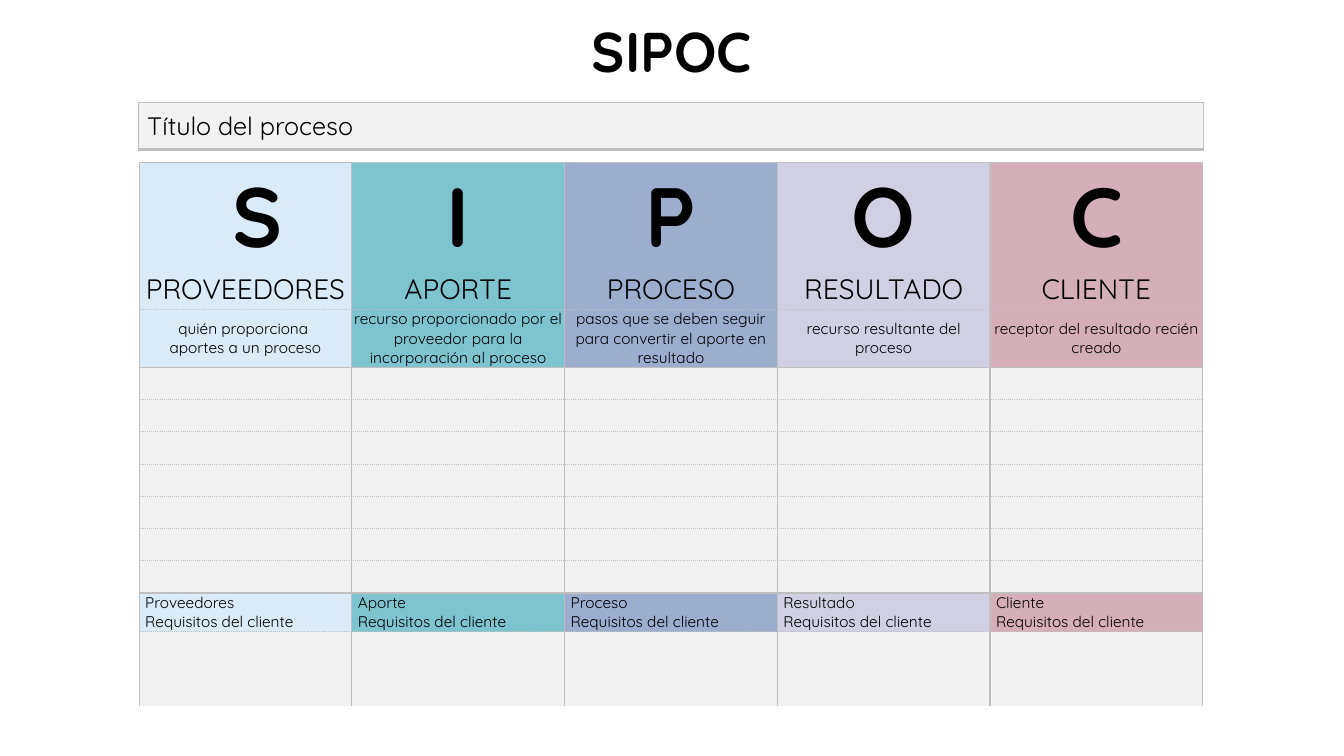
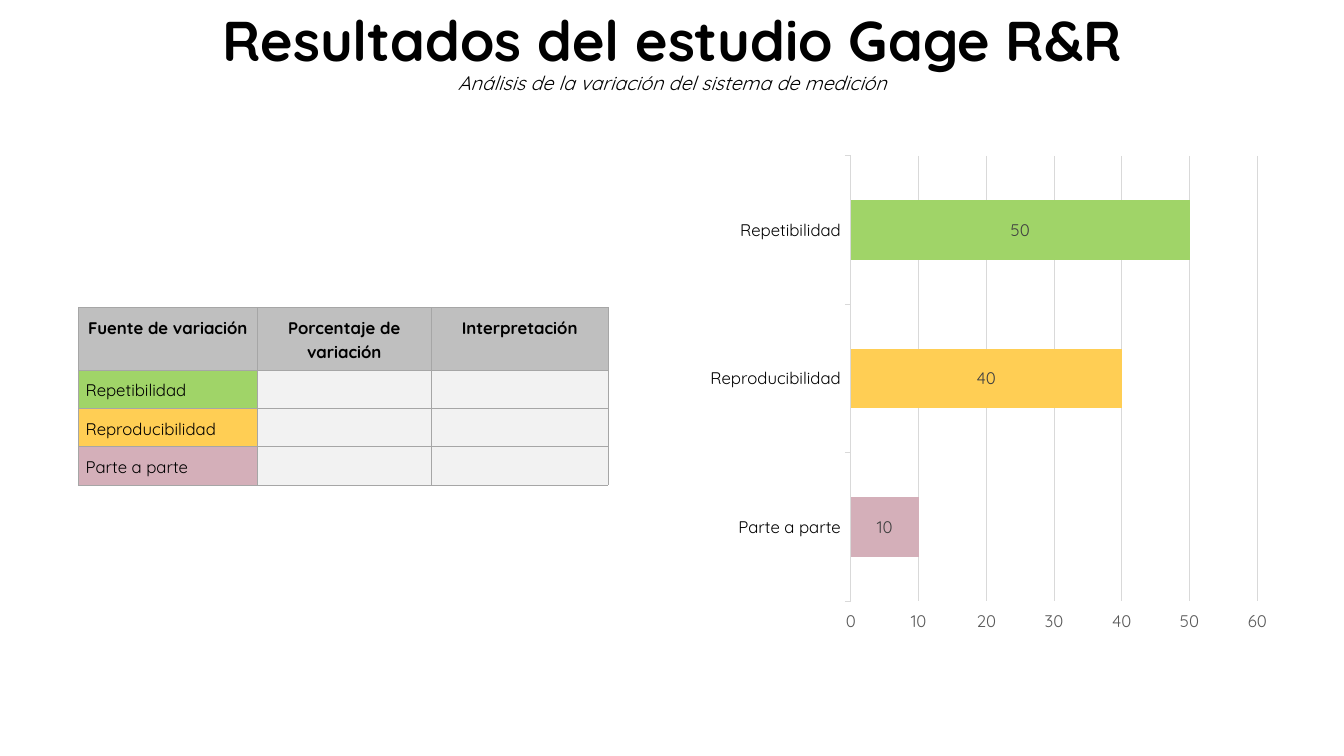
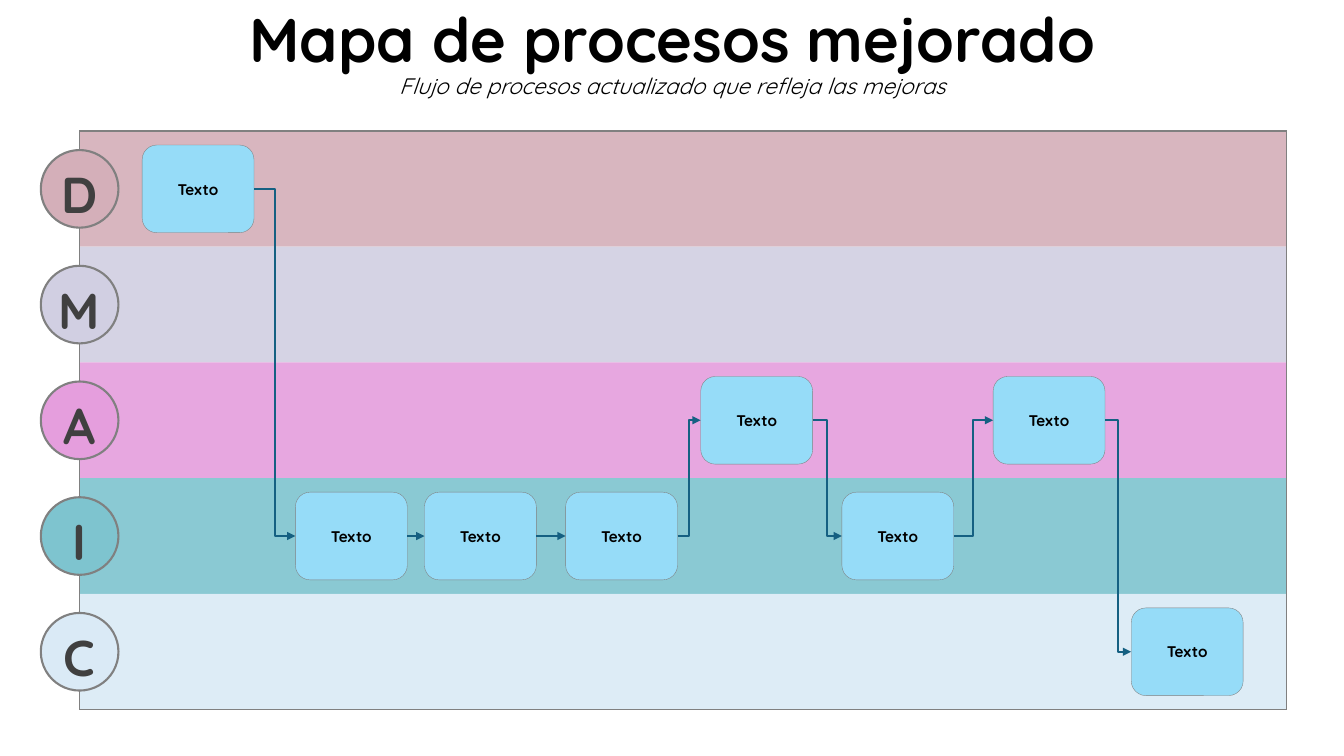
from lxml.etree import SubElement
from pptx import Presentation
from pptx.chart.data import CategoryChartData
from pptx.dml.color import RGBColor
from pptx.enum.chart import XL_CHART_TYPE as ChartType, XL_LABEL_POSITION as LabelPosition
from pptx.enum.chart import XL_TICK_MARK as TickMark
from pptx.enum.shapes import MSO_CONNECTOR as Connector, MSO_SHAPE as Shape
from pptx.enum.text import MSO_ANCHOR as Anchor, MSO_AUTO_SIZE as AutoSize, PP_ALIGN as Align
from pptx.oxml.ns import qn
from pptx.util import Emu, Pt

# Shared look
FONT = "Quicksand"
EMU_PER_PX = 9144  # 100 px to the inch
COLORS = {
    "black": "000000", "dark": "404040", "axis": "595959", "outline": "808080",
    "edge": "A6A6A6", "header": "BFBFBF", "grid": "D9D9D9", "empty": "F2F2F2",
    "sky": "DAEAF6", "teal": "7EC4CF", "blue": "9CADCE", "lilac": "D1CFE2",
    "rose": "D4AFB9", "pink": "E59EDD", "green": "A0D468", "yellow": "FFCE54",
    "box": "96DCF8", "arrow": "156082",
}

# Lines are (colour, points, dash)
SOLID = ("header", 1, "solid")
DOTTED = ("header", 1, "sysDot")
THICK = ("header", 2.25, "solid")
THIN = ("edge", 0.25, "solid")
FRAME = ("outline", 1, "solid")

# SIPOC content
PROCESS_TITLE = "Título del proceso"
SIPOC_COLUMNS = [
    (" S", "PROVEEDORES", "quién proporciona \naportes a un proceso", "Proveedores", "sky"),
    ("I", "APORTE", "recurso proporcionado por el proveedor para la incorporación al proceso",
     "Aporte", "teal"),
    ("P", "PROCESO", "pasos que se deben seguir para convertir el aporte en resultado",
     "Proceso", "blue"),
    ("O", "RESULTADO", "recurso resultante del proceso", "Resultado", "lilac"),
    ("C", "CLIENTE", "receptor del resultado recién creado", "Cliente", "rose"),
]
REQUIREMENTS = "Requisitos del cliente"
REQUIREMENTS_ROW = 10
SIPOC_ROWS = [106, 40, 56] + [32] * 7 + [38, 74]
SIPOC_RULES = [SOLID, None, DOTTED, SOLID] + [DOTTED] * 6 + [SOLID, DOTTED, None]

# Gage content
GAGE_HEADERS = ["Fuente de variación", "Porcentaje de variación", "Interpretación"]
GAGE_SOURCES = [
    ("Repetibilidad", 50, "green"),
    ("Reproducibilidad", 40, "yellow"),
    ("Parte a parte", 10, "rose"),
]

# Process map content: lanes, then boxes in flow order as (left, lane)
LANES = [("D", "rose"), ("M", "lilac"), ("A", "pink"), ("I", "teal"), ("C", "sky")]
BOX_TEXT = "Texto"
BOXES = [(141, 0), (293, 3), (421, 3), (561, 3), (695, 2), (835, 3), (985, 2), (1122, 4)]
BOX_WIDTH, BOX_HEIGHT, CIRCLE = 111, 87, 77
MAP_LEFT, MAP_TOP, MAP_WIDTH, MAP_HEIGHT = 79, 130, 1197, 574


def px(length):
    return Emu(round(length * EMU_PER_PX))


def rgb(name):
    return RGBColor.from_string(COLORS[name])


def style_font(font, size, color="black", bold=False, italic=False):
    font.name, font.size = FONT, Pt(size)
    font.bold, font.italic = bold, italic
    font.color.rgb = rgb(color)


def write(text_frame, text, size, color="black", bold=False, align=Align.CENTER, spacing=None):
    paragraph = text_frame.paragraphs[0]
    paragraph.text = text
    paragraph.alignment = align
    if spacing:
        paragraph.line_spacing = spacing
    for run in paragraph.runs:
        style_font(run.font, size, color, bold)
    for line_break in paragraph._p.findall(qn("a:br")):
        SubElement(line_break, qn("a:rPr"), sz=str(size * 100))
    if not text:
        SubElement(paragraph._p, qn("a:endParaRPr"), sz=str(size * 100))
    return paragraph


def set_margins(target, left, top, right, bottom):
    target.margin_left, target.margin_top = px(left), px(top)
    target.margin_right, target.margin_bottom = px(right), px(bottom)


def add_titled_slide(presentation, title, size, left, width, subtitle="", subtitle_size=0):
    slide = presentation.slides.add_slide(presentation.slide_layouts[5])
    shape = slide.shapes.title
    shape.left, shape.top, shape.width, shape.height = px(left), px(0), px(width), px(108)
    text_frame = shape.text_frame
    text_frame.word_wrap = True
    text_frame.auto_size = AutoSize.NONE
    text_frame.vertical_anchor = Anchor.MIDDLE
    text = f"{title}\n{subtitle}" if subtitle else title
    paragraph = write(text_frame, text, size, bold=True, spacing=0.9)
    if subtitle:
        style_font(paragraph.runs[1].font, subtitle_size, italic=True)
    return slide


def add_plain_table(slide, left, top, widths, heights):
    frame = slide.shapes.add_table(len(heights), len(widths), px(left), px(top),
                                   px(sum(widths)), px(sum(heights)))
    table = frame.table
    table.first_row = table.horz_banding = False
    for column, width in zip(table.columns, widths):
        column.width = px(width)
    for row, height in zip(table.rows, heights):
        row.height = px(height)
    return table


def style_cell(cell, fill, sides, top, bottom, alpha=None):
    properties = cell._tc.get_or_add_tcPr()
    for side, line in zip("LRTB", (sides, sides, top, bottom)):
        border = SubElement(properties, qn(f"a:ln{side}"))
        if line is None:
            SubElement(border, qn("a:noFill"))
            continue
        color, points, dash = line
        border.set("w", str(Pt(points)))
        solid = SubElement(border, qn("a:solidFill"))
        SubElement(solid, qn("a:srgbClr"), val=COLORS[color])
        SubElement(border, qn("a:prstDash"), val=dash)
    cell.fill.solid()
    cell.fill.fore_color.rgb = rgb(fill)
    if alpha:
        color_element = properties.find(f"{qn('a:solidFill')}/{qn('a:srgbClr')}")
        SubElement(color_element, qn("a:alpha"), val=str(alpha * 1000))


def add_shape(slide, kind, left, top, width, height, fill, line_width):
    shape = slide.shapes.add_shape(kind, px(left), px(top), px(width), px(height))
    shape.shadow.inherit = False
    shape.fill.solid()
    shape.fill.fore_color.rgb = rgb(fill)
    shape.line.color.rgb = rgb("outline")
    shape.line.width = Pt(line_width)
    shape.text_frame.word_wrap = True
    shape.text_frame.vertical_anchor = Anchor.MIDDLE
    return shape


def add_arrow(slide, source, target):
    kind = Connector.STRAIGHT if source.top == target.top else Connector.ELBOW
    middle = source.height // 2
    arrow = slide.shapes.add_connector(kind, source.left + source.width, source.top + middle,
                                       target.left, target.top + middle)
    arrow.begin_connect(source, 3)
    arrow.end_connect(target, 1)
    arrow.line.color.rgb = rgb("arrow")
    arrow.line.width = Pt(1.5)
    SubElement(arrow.line._get_or_add_ln(), qn("a:tailEnd"), type="triangle")
    SubElement(arrow._element.spPr, qn("a:effectLst"))


def build_sipoc(presentation):
    slide = add_titled_slide(presentation, "SIPOC", 40, 544, 245)

    # Process title bar
    cell = add_plain_table(slide, 137, 102, [1057], [46]).cell(0, 0)
    style_cell(cell, "empty", SOLID, SOLID, THICK)
    set_margins(cell, 9, 1, 1, 0)
    cell.vertical_anchor = Anchor.MIDDLE
    write(cell.text_frame, PROCESS_TITLE, 18, align=Align.LEFT)

    # Five columns
    table = add_plain_table(slide, 138, 161, [211] * len(SIPOC_COLUMNS), SIPOC_ROWS)
    for column, (letter, name, meaning, label, color) in enumerate(SIPOC_COLUMNS):
        texts = {0: (letter, 60), 1: (name, 20), 2: (meaning, 11),
                 REQUIREMENTS_ROW: (f"{label}\n{REQUIREMENTS}", 11)}
        for row in range(len(SIPOC_ROWS)):
            cell = table.cell(row, column)
            text, size = texts.get(row, ("", 11))
            is_label = row == REQUIREMENTS_ROW
            style_cell(cell, color if text else "empty", SOLID,
                       SIPOC_RULES[row], SIPOC_RULES[row + 1])
            set_margins(cell, 6 if is_label else 0, 0, 0, 0)
            cell.vertical_anchor = Anchor.MIDDLE
            write(cell.text_frame, text, size, bold=row == 0,
                  align=Align.LEFT if is_label else Align.CENTER)


def build_gage(presentation):
    slide = add_titled_slide(presentation, "Resultados del estudio Gage R&R", 40, 110, 1114,
                             "Análisis de la variación del sistema de medición", 14)

    # Table of sources
    rows = [(GAGE_HEADERS, ["header"] * 3)]
    rows += [([name, "", ""], [color, "empty", "empty"]) for name, _, color in GAGE_SOURCES]
    table = add_plain_table(slide, 78, 305, [177, 173, 175], [62, 38, 38, 38])
    for row, (texts, fills) in enumerate(rows):
        for column, (text, fill) in enumerate(zip(texts, fills)):
            cell = table.cell(row, column)
            style_cell(cell, fill, THIN, THIN, THIN)
            set_margins(cell, 7, 7, 7, 7)
            write(cell.text_frame, text, 12, bold=row == 0, spacing=1.15,
                  align=Align.LEFT if row else Align.CENTER)

    # Bar chart, listed from the bottom up
    bars = GAGE_SOURCES[::-1]
    data = CategoryChartData()
    data.categories = [name for name, _, _ in bars]
    data.add_series("Series 1", [value for _, value, _ in bars])
    chart = slide.shapes.add_chart(ChartType.BAR_STACKED, px(693), px(145),
                                   px(575), px(492), data).chart
    chart.has_legend = chart.has_title = False
    style_font(chart.font, 10)
    plot = chart.plots[0]
    plot.gap_width, plot.overlap, plot.vary_by_categories = 150, 100, False
    series = plot.series[0]
    for index, (_, _, color) in enumerate(bars):
        fill = series.points[index].format.fill
        fill.solid()
        fill.fore_color.rgb = rgb(color)
    labels = series.data_labels
    labels.show_value = True
    labels.position = LabelPosition.CENTER
    style_font(labels.font, 12, "dark")

    # Axes
    category_axis, value_axis = chart.category_axis, chart.value_axis
    for axis, color in ((category_axis, "black"), (value_axis, "axis")):
        axis.major_tick_mark = TickMark.OUTSIDE
        axis.minor_tick_mark = TickMark.NONE
        style_font(axis.tick_labels.font, 12, color)
    value_axis.minimum_scale, value_axis.maximum_scale, value_axis.major_unit = 0, 60, 10
    value_axis.has_major_gridlines = True
    value_axis.format.line.fill.background()
    for line in (category_axis.format.line, value_axis.major_gridlines.format.line):
        line.color.rgb = rgb("grid")
        line.width = Pt(0.75)


def build_process_map(presentation):
    slide = add_titled_slide(presentation, "Mapa de procesos mejorado", 44, 101, 1132,
                             "Flujo de procesos actualizado que refleja las mejoras", 16)
    lane_height = MAP_HEIGHT / len(LANES)

    def centred_top(lane, height):
        return MAP_TOP + lane * lane_height + (lane_height - height) / 2

    # Lanes with their letters
    table = add_plain_table(slide, MAP_LEFT, MAP_TOP, [MAP_WIDTH], [lane_height] * len(LANES))
    rules = [FRAME] + [None] * (len(LANES) - 1) + [FRAME]
    for lane, (letter, color) in enumerate(LANES):
        style_cell(table.cell(lane, 0), color, FRAME, rules[lane], rules[lane + 1], alpha=90)
        circle = add_shape(slide, Shape.OVAL, MAP_LEFT - CIRCLE / 2, centred_top(lane, CIRCLE),
                           CIRCLE, CIRCLE, color, 1.5)
        set_margins(circle.text_frame, 0, 0, 0, 0)
        write(circle.text_frame, letter, 36, "dark", bold=True, spacing=1.15)

    # Steps and the arrows between them
    boxes = []
    for left, lane in BOXES:
        box = add_shape(slide, Shape.ROUNDED_RECTANGLE, left, centred_top(lane, BOX_HEIGHT),
                        BOX_WIDTH, BOX_HEIGHT, "box", 0.25)
        write(box.text_frame, BOX_TEXT, 11, bold=True)
        boxes.append(box)
    for source, target in zip(boxes, boxes[1:]):
        add_arrow(slide, source, target)


def main():
    presentation = Presentation()
    presentation.slide_width, presentation.slide_height = px(1333), px(750)
    build_sipoc(presentation)
    build_gage(presentation)
    build_process_map(presentation)
    presentation.save("out.pptx")


if __name__ == "__main__":
    main()
